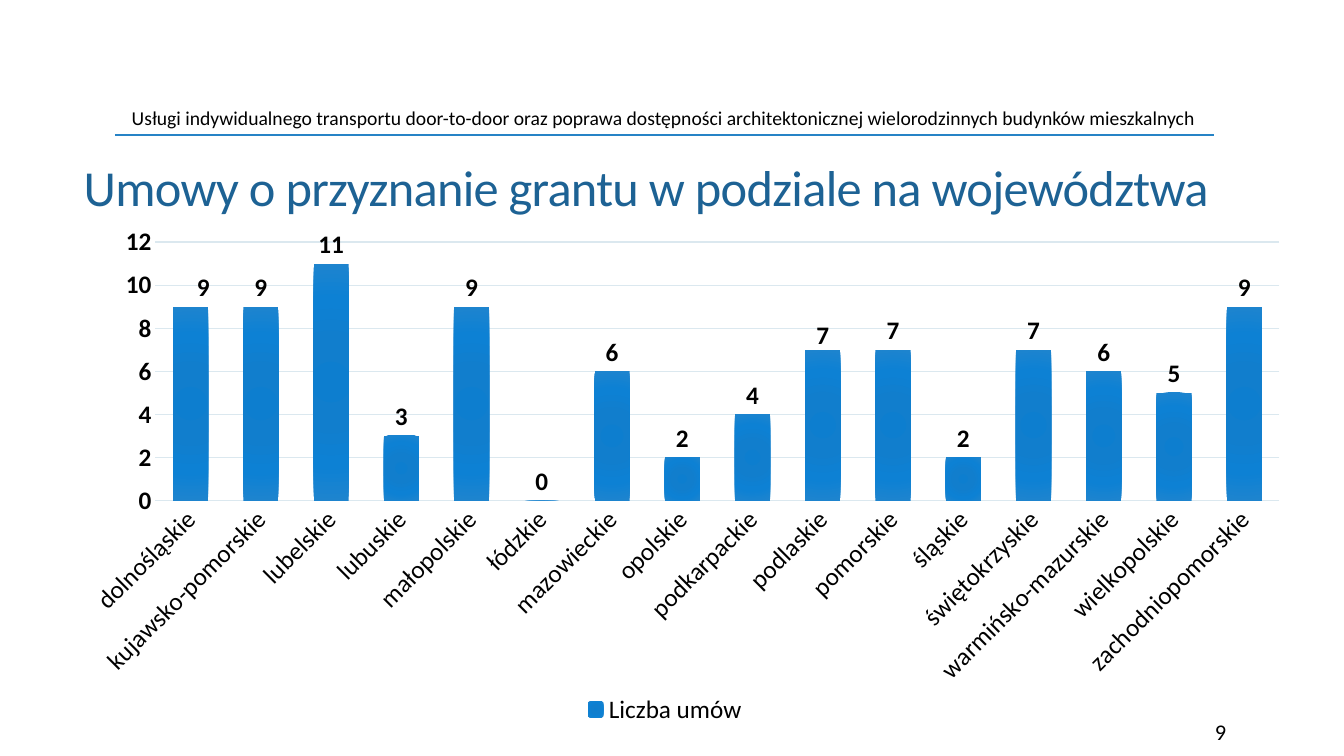
"""Build a slide with a column chart of grant agreements by voivodeship."""
import pptx
import pptx.chart.data
import pptx.dml.color
import pptx.enum.chart
import pptx.enum.shapes
import pptx.enum.text
import pptx.oxml
import pptx.oxml.ns
import pptx.util

WIDTH, HEIGHT = pptx.util.Inches(13.33), pptx.util.Inches(7.5)
FONT, BLACK, GRID = "Calibri", "000000", "DBE8EF"
ALIGN, ANCHOR = pptx.enum.text.PP_ALIGN, pptx.enum.text.MSO_ANCHOR
NAMESPACES = pptx.oxml.ns.nsdecls("a", "c")
AGREEMENTS = {
    "dolnośląskie": 9, "kujawsko-pomorskie": 9, "lubelskie": 11, "lubuskie": 3,
    "małopolskie": 9, "łódzkie": 0, "mazowieckie": 6, "opolskie": 2,
    "podkarpackie": 4, "podlaskie": 7, "pomorskie": 7, "śląskie": 2,
    "świętokrzyskie": 7, "warmińsko-mazurskie": 6, "wielkopolskie": 5,
    "zachodniopomorskie": 9,
}
BAR_GRADIENT = {0: "0D7ECF", 34: "117ECD", 70: "0D81D4", 100: "1E84CE"}
LABEL_SHIFTS = {0: (0.01, 0), 9: (0, 0.01)}


def color(code):
    """Turn a hex string into a colour."""
    return pptx.dml.color.RGBColor.from_string(code)


def area(left, top, width, height):
    """Turn percentages of the slide into lengths."""
    return [round(share * side / 100) for share, side in
            zip((left, top, width, height), (WIDTH, HEIGHT) * 2)]


def style_font(font, size, code=BLACK, bold=False):
    """Set the face, size, colour and weight of a font."""
    font.name, font.size, font.bold = FONT, pptx.util.Pt(size), bold
    font.color.rgb = color(code)


def style_line(line, code, width):
    """Set the colour and width of a line."""
    line.color.rgb, line.width = color(code), pptx.util.Pt(width)


def fill_text(box, text, size, code=BLACK, align=ALIGN.LEFT, anchor=ANCHOR.TOP):
    """Write one formatted paragraph into a box and return it."""
    frame = box.text_frame
    frame.word_wrap, frame.vertical_anchor = True, anchor
    frame.auto_size = pptx.enum.text.MSO_AUTO_SIZE.NONE
    para = frame.paragraphs[0]
    para.text, para.alignment = text, align
    style_font(para.font, size, code)
    return para


def add_title(page, text):
    """Fill and move the title placeholder."""
    box = page.shapes.title
    box.left, box.top, box.width, box.height = area(5.48, 20.53, 89.4, 8.8)
    para = fill_text(box, text, 36, "1D6294", anchor=ANCHOR.BOTTOM)
    para.line_spacing = 0.85
    for span in para.runs:
        span.font.bold = False
        span._r.get_or_add_rPr().set("spc", "-50")


def add_rule(page, left, right, top):
    """Draw a horizontal line without a shadow."""
    start_x, start_y, end_x, end_y = area(left, top, right, top)
    rule = page.shapes.add_connector(
        pptx.enum.shapes.MSO_CONNECTOR.STRAIGHT, start_x, start_y, end_x, end_y)
    style_line(rule.line, "2683C6", 1)
    rule.element.spPr.append(pptx.oxml.parse_xml(f"<a:effectLst {NAMESPACES}/>"))


def manual_layout(**settings):
    """Make a manual chart layout element."""
    parts = "".join(f'<c:{key} val="{value}"/>' for key, value in settings.items())
    return pptx.oxml.parse_xml(
        f"<c:layout {NAMESPACES}><c:manualLayout>{parts}</c:manualLayout></c:layout>")


def style_axes(chart):
    """Format both axes and turn the category names."""
    values, names = chart.value_axis, chart.category_axis
    for axis in (values, names):
        axis.major_tick_mark = pptx.enum.chart.XL_TICK_MARK.NONE
        style_font(axis.tick_labels.font, 18, bold=axis is values)
    values.minimum_scale, values.maximum_scale, values.major_unit = 0, 12, 2
    values.format.line.fill.background()
    style_line(values.major_gridlines.format.line, GRID, 0.75)
    style_line(names.format.line, GRID, 0.75)
    body = chart.element.xpath(".//c:catAx/c:txPr/a:bodyPr")[0]
    body.set("rot", "-2700000")
    body.set("vert", "horz")


def style_columns(chart):
    """Format the columns, their gradient and their labels."""
    plot, outside = chart.plots[0], pptx.enum.chart.XL_LABEL_POSITION.OUTSIDE_END
    plot.gap_width, plot.overlap, plot.vary_by_categories = 100, -24, False
    series = plot.series[0]
    series.format.fill.solid()
    stops = "".join(f'<a:gs pos="{place * 1000}"><a:srgbClr val="{code}"/></a:gs>'
                    for place, code in BAR_GRADIENT.items())
    gradient = pptx.oxml.parse_xml(
        f'<a:gradFill {NAMESPACES}><a:gsLst>{stops}</a:gsLst><a:path path="circle">'
        '<a:fillToRect l="100000" t="100000" r="100000" b="100000"/>'
        "</a:path></a:gradFill>")
    solid = chart.element.xpath(".//c:ser/c:spPr/a:solidFill")[0]
    solid.getparent().replace(solid, gradient)
    labels = series.data_labels
    labels.show_value, labels.position = True, outside
    style_font(labels.font, 18, bold=True)
    for index, (right, down) in LABEL_SHIFTS.items():
        label = series.points[index].data_label
        label.position = outside
        style_font(label.font, 18, bold=True)
        mark = chart.element.xpath(f".//c:dLbl/c:idx[@val='{index}']")[0]
        mark.addnext(manual_layout(x=right, y=down))


def add_column_chart(page):
    """Add the chart of agreements with its legend and plot area."""
    data = pptx.chart.data.CategoryChartData()
    data.categories = list(AGREEMENTS)
    data.add_series("Liczba umów", list(AGREEMENTS.values()))
    chart = page.shapes.add_chart(
        pptx.enum.chart.XL_CHART_TYPE.COLUMN_CLUSTERED,
        *area(2.33, 29.47, 94.28, 67.07), data).chart
    chart.has_title, chart.has_legend = False, True
    style_font(chart.font, 10)
    chart.legend.position = pptx.enum.chart.XL_LEGEND_POSITION.BOTTOM
    chart.legend.include_in_layout = False
    style_font(chart.legend.font, 18)
    style_axes(chart)
    style_columns(chart)
    plot_area = chart.element.xpath(".//c:plotArea")[0]
    for layout in plot_area.xpath("./c:layout"):
        plot_area.remove(layout)
    plot_area.insert(0, manual_layout(
        layoutTarget="inner", xMode="edge", yMode="edge",
        x=9.8 / 100, y=3.8 / 100, w=88.7 / 100, h=0.51))


def main():
    """Build and save the slide."""
    deck = pptx.Presentation()
    deck.slide_width, deck.slide_height = WIDTH, HEIGHT
    page = deck.slides.add_slide(deck.slide_layouts.get_by_name("Title Only"))
    add_rule(page, 8.55, 90.32, 17.87)
    header = page.shapes.add_textbox(*area(9, 13.33, 80.8, 4.53))
    fill_text(header, "Usługi indywidualnego transportu door-to-door oraz poprawa "
              "dostępności architektonicznej wielorodzinnych budynków mieszkalnych",
              14, align=ALIGN.CENTER)
    add_title(page, "Umowy o przyznanie grantu w podziale na województwa")
    add_column_chart(page)
    number = page.shapes.add_textbox(*area(81.25, 94.13, 10.73, 5.33))
    fill_text(number, "9", 16, align=ALIGN.RIGHT, anchor=ANCHOR.MIDDLE)
    deck.save("out.pptx")


if __name__ == "__main__":
    main()
